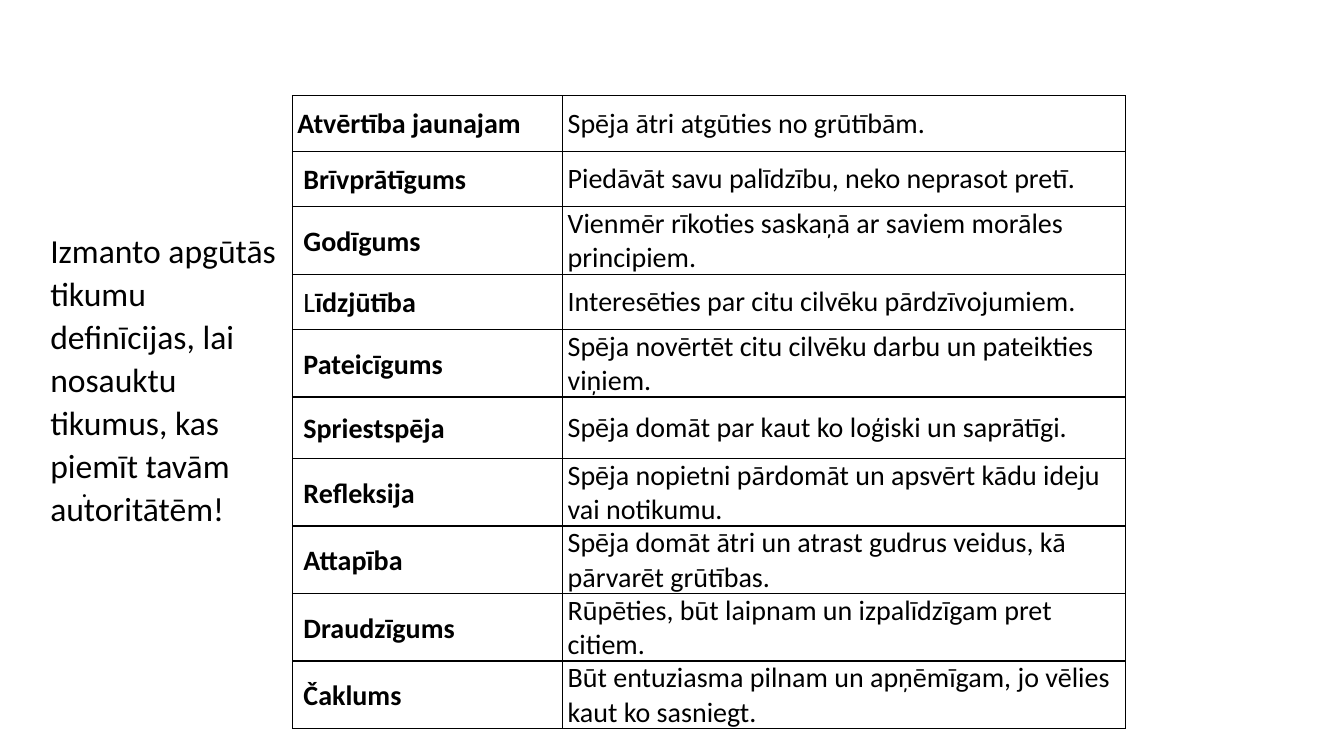
from pptx import Presentation
from pptx.dml.color import RGBColor
from pptx.enum import text as t
from pptx.oxml import parse_xml
from pptx.oxml.ns import nsdecls
from pptx.util import Inches, Pt

BLACK = RGBColor(0, 0, 0)
FONT = "Calibri"
TASK = "Izmanto apgūtās tikumu definīcijas, lai nosauktu tikumus, kas piemīt tavām autoritātēm!"
DOTS = [(0.71, 4.62), (1.35, 4.42)]
ONE, MID, TWO = 0.55, 0.61, 0.67
COLS = [2.68, 5.58]
ROWS = [
    ("", "Atvērtība jaunajam", "Spēja ātri atgūties no grūtībām.", ONE),
    ("", "Brīvprātīgums", "Piedāvāt savu palīdzību, neko neprasot pretī.", ONE),
    ("", "Godīgums", "Vienmēr rīkoties saskaņā ar saviem morāles principiem.", TWO),
    ("L", "īdzjūtība", "Interesēties par citu cilvēku pārdzīvojumiem.", ONE),
    ("", "Pateicīgums", "Spēja novērtēt citu cilvēku darbu un pateikties viņiem.", TWO),
    ("", "Spriestspēja", "Spēja domāt par kaut ko loģiski un saprātīgi.", MID),
    ("", "Refleksija", "Spēja nopietni pārdomāt un apsvērt kādu ideju vai notikumu.", TWO),
    ("", "Attapība", "Spēja domāt ātri un atrast gudrus veidus, kā pārvarēt grūtības.", TWO),
    ("", "Draudzīgums", "Rūpēties, būt laipnam un izpalīdzīgam pret citiem.", TWO),
    ("", "Čaklums", "Būt entuziasma pilnam un apņēmīgam, jo vēlies kaut ko sasniegt.", TWO),
]


def write(frame, words, size=20, bold=False, line=1.0, after=0, plain=""):
    para = frame.paragraphs[0]
    para.line_spacing = line
    para.space_after = Pt(after)
    for part, heavy in ((plain, False), (words, bold)):
        if part:
            run = para.add_run()
            run.text = part
            run.font.name = FONT
            run.font.size = Pt(size)
            run.font.bold = heavy
            run.font.color.rgb = BLACK


def add_text(slide, box, words, wrap, **style):
    frame = slide.shapes.add_textbox(*map(Inches, box)).text_frame
    frame.word_wrap = wrap
    frame.auto_size = t.MSO_AUTO_SIZE.SHAPE_TO_FIT_TEXT
    write(frame, words, line=1.07, **style)


def dress(cell, left):
    cell.margin_left, cell.margin_right = Inches(left), Inches(0.05)
    cell.margin_top = cell.margin_bottom = 0
    cell.vertical_anchor = t.MSO_ANCHOR.MIDDLE
    props = cell._tc.get_or_add_tcPr()
    for side in ("lnL", "lnR", "lnT", "lnB"):
        props.append(parse_xml(
            f'<a:{side} {nsdecls("a")} w="{Pt(1)}"><a:solidFill>'
            f'<a:srgbClr val="{BLACK}"/></a:solidFill></a:{side}>'))
    cell.fill.background()


def main():
    deck = Presentation()
    deck.slide_width, deck.slide_height = Inches(13.33), Inches(7.5)
    slide = deck.slides.add_slide(deck.slide_layouts[6])

    add_text(slide, (0.4, 2.2, 2.49, 3.11), TASK, True, size=24, after=8)
    for left, top in DOTS:
        add_text(slide, (left, top, 0.27, 0.41), ".", False, size=18)

    high = sum(row[-1] for row in ROWS)
    box = map(Inches, (2.9, 0.95, sum(COLS), high))
    table = slide.shapes.add_table(len(ROWS), len(COLS), *box).table
    table.first_row = table.horz_banding = False
    for col, wide in zip(table.columns, COLS):
        col.width = Inches(wide)
    for i, (plain, name, sense, tall) in enumerate(ROWS):
        table.rows[i].height = Inches(tall)
        virtue, meaning = table.cell(i, 0), table.cell(i, 1)
        dress(virtue, 0.11 if i else 0.05)
        dress(meaning, 0.05)
        write(virtue.text_frame, name, bold=True, line=1.07 if i else 1.0, plain=plain)
        write(meaning.text_frame, sense)

    deck.save("out.pptx")


if __name__ == "__main__":
    main()
